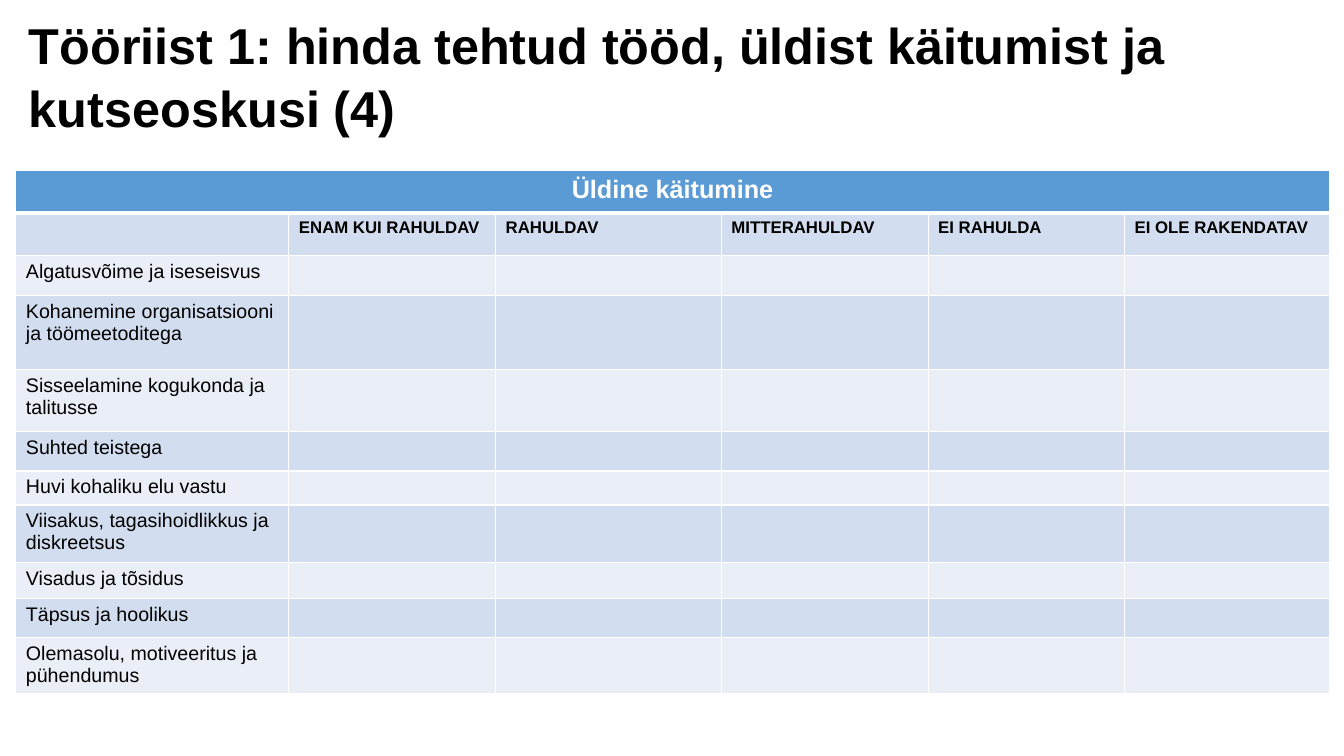
import pptx
import pptx.util
import pptx.dml.color
import pptx.enum.text
import pptx.oxml.ns
from lxml import etree
from pptx.util import Cm, Pt

RGBColor = pptx.dml.color.RGBColor
BLACK = RGBColor(0, 0, 0)
WHITE = RGBColor(255, 255, 255)
BLUE = RGBColor(0x5B, 0x9B, 0xD5)
DARK = RGBColor(0xD2, 0xDE, 0xEF)
LIGHT = RGBColor(0xEA, 0xEF, 0xF7)
FONT = "Arial"

TITLE = "Tööriist 1: hinda tehtud tööd, üldist käitumist ja kutseoskusi (4)"
HEAD = "Üldine käitumine"
GRADES = ["ENAM KUI RAHULDAV", "RAHULDAV", "MITTERAHULDAV",
          "EI RAHULDA", "EI OLE RAKENDATAV"]
# Each trait with its row height in cm
TRAITS = [
    ("Algatusvõime ja iseseisvus", 1.01),
    ("Kohanemine organisatsiooni ja töömeetoditega", 1.86),
    ("Sisseelamine kogukonda ja talitusse", 1.57),
    ("Suhted teistega", 0.99),
    ("Huvi kohaliku elu vastu", 0.84),
    ("Viisakus, tagasihoidlikkus ja diskreetsus", 1.45),
    ("Visadus ja tõsidus", 0.91),
    ("Täpsus ja hoolikus", 0.97),
    ("Olemasolu, motiveeritus ja pühendumus", 1.43),
]
WIDTHS = [6.88, 5.21, 5.69, 5.21, 4.95, 5.16]
TOP_ROW = 1.07


def style(para, size, color, bold):
    for run in para.runs:
        font = run.font
        font.name, font.size, font.bold = FONT, Pt(size), bold
        font.color.rgb = color


def add_title(slide):
    box = slide.shapes.add_textbox(Cm(0.48), Cm(0.15), Cm(31.27), Cm(3.33))
    frame = box.text_frame
    frame.word_wrap = True
    frame.text = TITLE
    para = frame.paragraphs[0]
    para.line_spacing = 1.05
    style(para, 36, BLACK, True)


def set_edge(cell, side, width):
    """Draw one white border of a cell."""
    qn = pptx.oxml.ns.qn
    props = cell._tc.get_or_add_tcPr()
    line = etree.Element(qn("a:ln" + side), w=str(Pt(width)))
    fill = etree.SubElement(line, qn("a:solidFill"))
    etree.SubElement(fill, qn("a:srgbClr"), val=str(WHITE))
    # Borders come before the fill, in the order L, R, T, B
    props.insert("LRTB".index(side), line)


def set_cell(cell, text, size, fill, color=BLACK, bold=False, base=1):
    cell.fill.solid()
    cell.fill.fore_color.rgb = fill
    for side in "LRTB":
        set_edge(cell, side, base if side == "B" else 1)
    para = cell.text_frame.paragraphs[0]
    if text:
        para.text = text
        style(para, size, color, bold)
    else:
        # An empty cell keeps its row low through its end mark
        mark = pptx.oxml.ns.qn("a:endParaRPr")
        etree.SubElement(para._p, mark, sz=str(size * 100))


def add_grid(slide):
    heights = [TOP_ROW, TOP_ROW] + [height for _, height in TRAITS]
    frame = slide.shapes.add_table(
        len(heights), len(WIDTHS), Cm(0.4), Cm(4.3),
        Cm(sum(WIDTHS)), Cm(sum(heights)))
    table = frame.table
    for col, width in zip(table.columns, WIDTHS):
        col.width = Cm(width)
    for row, height in zip(table.rows, heights):
        row.height = Cm(height)

    # Heading across all columns
    for cell in table.rows[0].cells:
        first = cell is table.cell(0, 0) or cell._tc is table.cell(0, 0)._tc
        set_cell(cell, HEAD if first else "", 18, BLUE, WHITE, True, 3)
    head = table.cell(0, 0)
    head.merge(table.cell(0, len(WIDTHS) - 1))
    head.text_frame.paragraphs[0].alignment = pptx.enum.text.PP_ALIGN.CENTER

    # Grades
    for col, text in enumerate([""] + GRADES):
        set_cell(table.cell(1, col), text, 12, DARK, bold=True)

    # Traits in bands, with empty cells to fill in
    for row, (trait, _) in enumerate(TRAITS, 2):
        fill = DARK if row % 2 else LIGHT
        for col in range(len(WIDTHS)):
            set_cell(table.cell(row, col), "" if col else trait, 14, fill)


def main():
    deck = pptx.Presentation()
    deck.slide_width, deck.slide_height = Cm(33.87), Cm(19.05)
    slide = deck.slides.add_slide(deck.slide_layouts[6])
    add_grid(slide)
    add_title(slide)
    deck.save("out.pptx")


if __name__ == "__main__":
    main()
